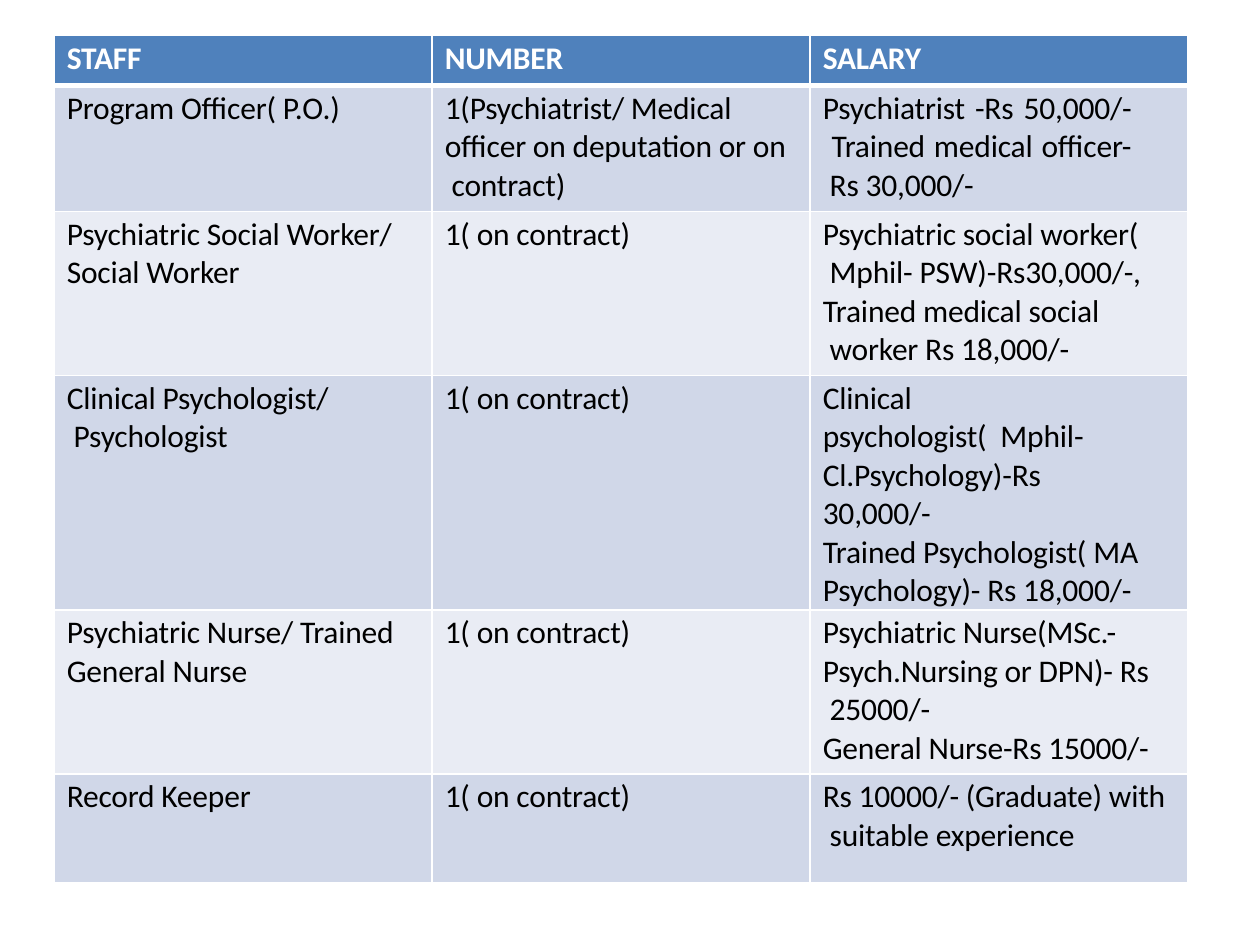
"""Build a slide with a table of staff posts, numbers and salaries."""
from pptx import Presentation
from pptx.dml.color import RGBColor
from pptx.enum.text import PP_ALIGN as Align
from pptx.oxml import parse_xml
from pptx.oxml.ns import nsdecls
from pptx.util import Inches, Pt


def color(value):
    return RGBColor.from_string(value)


def write(paragraph, text, bold=False, ink="000000", before=2.4, right=0, align=None):
    paragraph.alignment = align
    paragraph.space_before = Pt(before)
    properties = paragraph._p.get_or_add_pPr()
    properties.set("marL", str(Inches(0.1)))
    properties.set("marR", str(Inches(right)))
    run = paragraph.add_run()
    run.text = text
    run.font.name = "Calibri"
    run.font.size = Pt(18)
    run.font.bold = bold
    run.font.color.rgb = color(ink)
    run._r.get_or_add_rPr().set("spc", "-10")


contract = ["1( on contract)"]
rows = [
    (0.4, ["STAFF"], ["NUMBER"], ["SALARY"]),
    (1, ["Program Officer( P.O.)"],
     ["1(Psychiatrist/ Medical  officer on deputation or on  contract)"],
     ["Psychiatrist -Rs 50,000/-  Trained medical officer-  Rs 30,000/-"]),
    (1.3, ["Psychiatric Social Worker/  Social Worker"], contract,
     ["Psychiatric social worker(  Mphil- PSW)-Rs30,000/-,",
      "Trained medical social  worker Rs 18,000/-"]),
    (1.6, ["Clinical Psychologist/  Psychologist"], contract,
     ["Clinical psychologist(  Mphil-Cl.Psychology)-Rs  30,000/-",
      "Trained Psychologist( MA  Psychology)- Rs 18,000/-"]),
    (1.3, ["Psychiatric Nurse/ Trained  General Nurse"], contract,
     ["Psychiatric Nurse(MSc.-  Psych.Nursing or DPN)- Rs  25000/-",
      "General Nurse-Rs 15000/-"]),
    (0.86, ["Record Keeper"], contract,
     ["Rs 10000/- (Graduate) with  suitable experience"]),
]
formats = {
    (1, 1, 0): {"right": 0.15},
    (1, 2, 0): {"right": 0.45, "align": Align.JUSTIFY},
    (2, 2, 0): {"right": 0.35},
    (2, 2, 1): {"right": 0.69},
    (3, 0, 0): {"right": 0.81},
    (3, 2, 0): {"right": 0.5},
    (4, 2, 0): {"right": 0.29},
    (5, 2, 0): {"right": 0.15},
}

presentation = Presentation()
presentation.slide_width = Inches(10)
presentation.slide_height = Inches(7.5)
slide = presentation.slides.add_slide(presentation.slide_layouts[6])
table = slide.shapes.add_table(
    len(rows), 3, Inches(0.43), Inches(0.28), Inches(9), Inches(6.46)).table

for row_index, (height, *cells) in enumerate(rows):
    table.rows[row_index].height = Inches(height)
    header = row_index == 0
    fill = "4F81BC" if header else ("E9ECF4", "D0D7E8")[row_index % 2]
    widths = {"L": 1, "R": 1, "T": 3 if row_index == 1 else 1, "B": 3 if header else 1}
    for column_index, texts in enumerate(cells):
        cell = table.cell(row_index, column_index)
        cell.margin_left = cell.margin_right = cell.margin_bottom = 0
        cell.margin_top = Inches(0.03)
        for text_index, text in enumerate(texts):
            frame = cell.text_frame
            paragraph = frame.add_paragraph() if text_index else frame.paragraphs[0]
            style = {"bold": header, "ink": "FFFFFF" if header else "000000",
                     "before": 0.1 if text_index else 2.4}
            style.update(formats.get((row_index, column_index, text_index), {}))
            write(paragraph, text, **style)
        cell_properties = cell._tc.get_or_add_tcPr()
        for side, width in widths.items():
            cell_properties.append(parse_xml(
                f'<a:ln{side} {nsdecls("a")} w="{Pt(width)}"><a:solidFill>'
                f'<a:srgbClr val="FFFFFF"/></a:solidFill></a:ln{side}>'))
        cell.fill.solid()
        cell.fill.fore_color.rgb = color(fill)

presentation.save("out.pptx")
